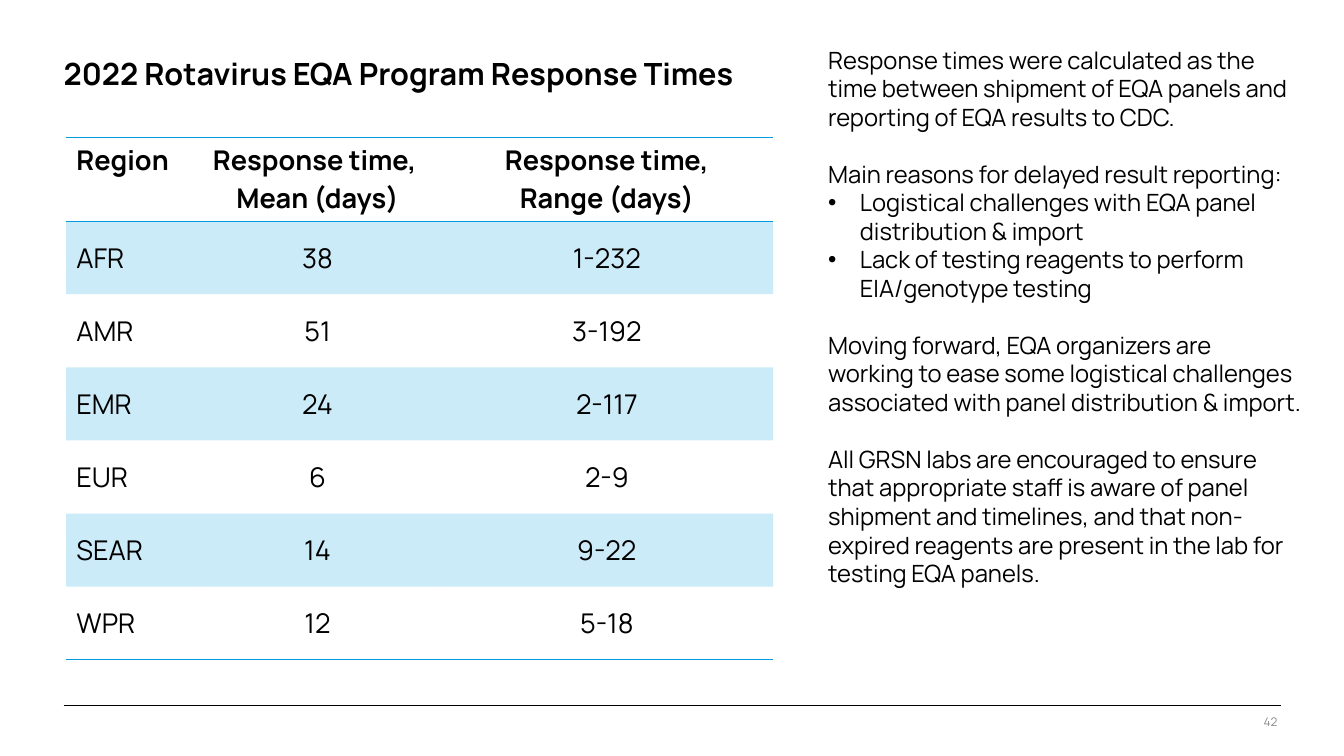
from dataclasses import dataclass
from lxml.etree import SubElement
from pptx import Presentation
from pptx.dml.color import RGBColor
from pptx.enum.shapes import MSO_CONNECTOR
from pptx.enum.text import MSO_ANCHOR, MSO_AUTO_SIZE, PP_ALIGN
from pptx.oxml.ns import qn
from pptx.util import Inches, Pt


@dataclass(frozen=True)
class Theme:
    font: str = "Manrope"
    ink: str = "000000"
    blue: str = "009CDE"
    gray: str = "8C8C8C"
    title: int = 36
    cell: int = 32
    body: int = 28
    note: int = 14
    tint: int = 20
    gap: float = 33.6


HEAD = ["Region", "Response time, \nMean (days)", "Response time,\nRange (days)"]
DATA = [
    ("AFR", "38", "1-232"),
    ("AMR", "51", "3-192"),
    ("EMR", "24", "2-117"),
    ("EUR", "6", "2-9"),
    ("SEAR", "14", "9-22"),
    ("WPR", "12", "5-18"),
]
WIDTHS = [2.1, 4.03, 5.44]
HEIGHT, TOP_ROW = 8.5, 1.32

# Each group is an opening paragraph followed by its bullets.
GROUPS = [
    ["Response times were calculated as the time between shipment of EQA panels "
     "and reporting of EQA results to CDC."],
    ["Main reasons for delayed result reporting:",
     "Logistical challenges with EQA panel distribution & import",
     "Lack of testing reagents to perform EIA/genotype testing"],
    ["Moving forward, EQA organizers are working to ease some logistical challenges "
     "associated with panel distribution & import."],
    ["All GRSN labs are encouraged to ensure that appropriate staff is aware of panel "
     "shipment and timelines, and that non-expired reagents are present in the lab "
     "for testing EQA panels."],
]


class Deck:
    def __init__(self, theme, width, height):
        self.theme = theme
        self.prs = Presentation()
        self.prs.slide_width, self.prs.slide_height = Inches(width), Inches(height)
        self.slide = self.prs.slides.add_slide(self.prs.slide_layouts[1])

    def place(self, shape, left, top, width, height, inset=(0, 0)):
        """Move a text shape, fix its size and return its text frame."""
        shape.left, shape.top = Inches(left), Inches(top)
        shape.width, shape.height = Inches(width), Inches(height)
        frame = shape.text_frame
        frame.word_wrap = True
        frame.auto_size = MSO_AUTO_SIZE.NONE
        frame.margin_left = frame.margin_right = Inches(inset[0])
        frame.margin_top = frame.margin_bottom = Inches(inset[1])
        return frame

    def style(self, par, size, color=None, bold=False, align=PP_ALIGN.LEFT):
        par.alignment = align
        for run in par.runs:
            run.font.name = self.theme.font
            run.font.size = Pt(size)
            run.font.bold = bold
            run.font.color.rgb = RGBColor.from_string(color or self.theme.ink)

    def title(self, text, *box):
        frame = self.place(self.slide.shapes.title, *box)
        frame.vertical_anchor = MSO_ANCHOR.MIDDLE
        frame.text = text
        par = frame.paragraphs[0]
        par.line_spacing = 0.9
        self.style(par, self.theme.title, bold=True)

    def bullet(self, par, shown):
        props = par._p.get_or_add_pPr()
        dent = Inches(0.52) if shown else 0
        props.set("marL", str(dent))
        props.set("indent", str(-dent))
        if shown:
            SubElement(props, qn("a:buFont"), typeface="Arial")
            SubElement(props, qn("a:buChar"), char="•")
        else:
            SubElement(props, qn("a:buNone"))

    def body(self, groups, *box):
        frame = self.place(self.slide.placeholders[1], *box, inset=(0.1, 0.05))
        frame.vertical_anchor = MSO_ANCHOR.TOP
        frame.text = "\n".join(text for group in groups for text in group)
        pars = iter(frame.paragraphs)
        for order, group in enumerate(groups):
            for item in range(len(group)):
                par = next(pars)
                self.bullet(par, item > 0)
                par.line_spacing = 1.0
                par.space_before = Pt(self.theme.gap if order and not item else 0)
                self.style(par, self.theme.body)

    def edges(self, cell, drawn):
        """Draw the named sides of a cell and hide the others."""
        props = cell._tc.get_or_add_tcPr()
        for side in "LRTB":
            line = SubElement(props, qn("a:ln" + side), w=str(Pt(1)))
            if side in drawn:
                fill = SubElement(line, qn("a:solidFill"))
                SubElement(fill, qn("a:srgbClr"), val=self.theme.blue)
            else:
                SubElement(line, qn("a:noFill"))

    def shade(self, cell, tinted):
        if not tinted:
            cell.fill.background()
            return
        cell.fill.solid()
        cell.fill.fore_color.rgb = RGBColor.from_string(self.theme.blue)
        color = cell._tc.tcPr.find(qn("a:solidFill")).find(qn("a:srgbClr"))
        SubElement(color, qn("a:alpha"), val=str(self.theme.tint * 1000))

    def table(self, rows, widths, heights, left, top):
        grid = self.slide.shapes.add_table(
            len(rows), len(widths), Inches(left), Inches(top),
            Inches(sum(widths)), Inches(sum(heights))).table
        grid.first_row = grid.horz_banding = False
        for col, width in zip(grid.columns, widths):
            col.width = Inches(width)
        for r, (row, height) in enumerate(zip(rows, heights)):
            grid.rows[r].height = Inches(height)
            drawn = "TB" if r == 0 else "B" if r == len(rows) - 1 else "T" if r == 1 else ""
            for c, text in enumerate(row):
                cell = grid.cell(r, c)
                cell.margin_left = cell.margin_right = Inches(0.17)
                cell.margin_top = cell.margin_bottom = Inches(0.08)
                cell.vertical_anchor = MSO_ANCHOR.MIDDLE if r else MSO_ANCHOR.TOP
                self.edges(cell, drawn)
                self.shade(cell, r % 2 == 1)
                cell.text_frame.text = text
                for par in cell.text_frame.paragraphs:
                    self.style(par, self.theme.cell, bold=r == 0,
                               align=PP_ALIGN.CENTER if c else PP_ALIGN.LEFT)

    def rule(self, left, right, top):
        line = self.slide.shapes.add_connector(
            MSO_CONNECTOR.STRAIGHT, Inches(left), Inches(top), Inches(right), Inches(top))
        line.line.color.rgb = RGBColor.from_string(self.theme.ink)
        line.line.width = Pt(0.75)
        SubElement(line._element.spPr, qn("a:effectLst"))

    def note(self, text, *box):
        shape = self.slide.shapes.add_textbox(0, 0, 0, 0)
        frame = self.place(shape, *box)
        frame.text = text
        self.style(frame.paragraphs[0], self.theme.note, self.theme.gray,
                   align=PP_ALIGN.RIGHT)


def main():
    deck = Deck(Theme(), 21.99, 12.37)
    deck.rule(1.04, 20.96, 11.54)
    deck.title("2022 Rotavirus EQA Program Response Times", 1.04, 0.97, 20.35, 0.55)
    count = len(DATA)
    heights = [TOP_ROW] + [(HEIGHT - TOP_ROW) / count] * count
    deck.table([HEAD, *DATA], WIDTHS, heights, 1.08, 2.24)
    deck.body(GROUPS, 13.45, 0.69, 7.94, 10)
    deck.note("42", 19.28, 11.69, 1.62, 0.24)
    deck.prs.save("out.pptx")


if __name__ == "__main__":
    main()
